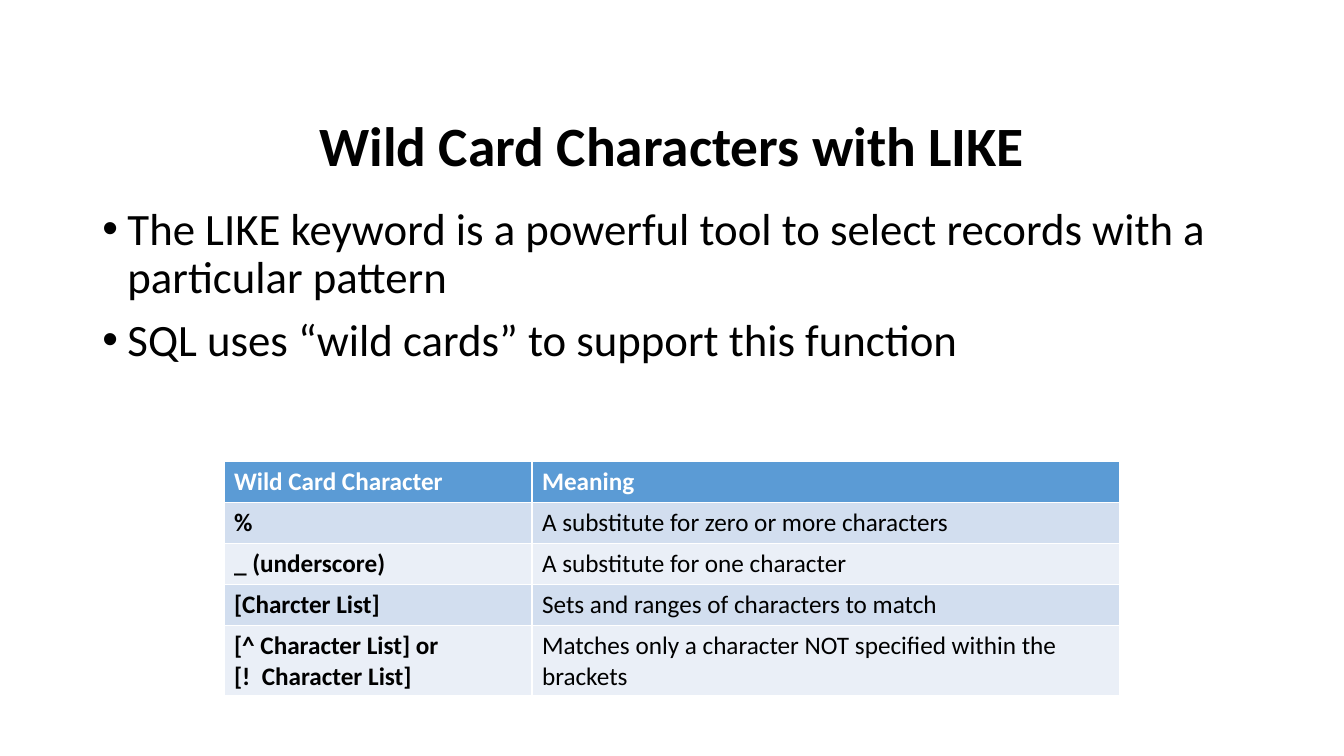
from pptx import Presentation
from pptx.dml.color import RGBColor
from pptx.enum.text import MSO_ANCHOR, PP_ALIGN
from pptx.oxml.xmlchemy import OxmlElement
from pptx.util import Pt


def rgb(value):
    return RGBColor.from_string(value)


def add_text(paragraph, text, size, color="000000", bold=False):
    run = paragraph.add_run()
    run.text = text
    run.font.name = "Calibri"
    run.font.size = Pt(size)
    run.font.bold = bold
    run.font.color.rgb = rgb(color)


presentation = Presentation()
presentation.slide_width = Pt(960)
presentation.slide_height = Pt(540)
slide = presentation.slides.add_slide(presentation.slide_layouts[6])

# Title
title = slide.shapes.add_textbox(Pt(66), Pt(79.2), Pt(828), Pt(54)).text_frame
title.word_wrap = True
title.vertical_anchor = MSO_ANCHOR.MIDDLE
paragraph = title.paragraphs[0]
paragraph.alignment = PP_ALIGN.CENTER
paragraph.line_spacing = 0.9
add_text(paragraph, "Wild Card Characters with LIKE", 39.6, bold=True)

# Bullets
bullets = [
    "The LIKE keyword is a powerful tool to select records with a particular pattern",
    "SQL uses “wild cards” to support this function",
]
body = slide.shapes.add_textbox(Pt(66), Pt(144), Pt(828), Pt(342.7)).text_frame
body.word_wrap = True
for index, text in enumerate(bullets):
    paragraph = body.add_paragraph() if index else body.paragraphs[0]
    paragraph.line_spacing = 0.9
    paragraph.space_before = Pt(10 if index else 0)
    properties = paragraph._p.get_or_add_pPr()
    properties.set("marL", str(Pt(18)))
    properties.set("indent", str(-Pt(18)))
    font = OxmlElement("a:buFont")
    font.set("typeface", "Arial")
    bullet = OxmlElement("a:buChar")
    bullet.set("char", "•")
    properties.extend([font, bullet])
    add_text(paragraph, text, 32)

# Table of wild cards: the default table style supplies the white borders
wild_cards = [
    ("Wild Card Character", "Meaning"),
    ("%", "A substitute for zero or more characters"),
    ("_ (underscore)", "A substitute for one character"),
    ("[Charcter List]", "Sets and ranges of characters to match"),
    ("[^ Character List] or\n[!  Character List]",
     "Matches only a character NOT specified within the brackets"),
]
row_heights = [29.2] * 4 + [50.4]
table = slide.shapes.add_table(
    len(wild_cards), 2, Pt(160), Pt(329.8), Pt(640), Pt(sum(row_heights))
).table
for column, width in zip(table.columns, (220, 420)):
    column.width = Pt(width)

for row_index, (row, height) in enumerate(zip(wild_cards, row_heights)):
    table.rows[row_index].height = Pt(height)
    is_header = row_index == 0
    band = "D2DEEF" if row_index % 2 else "EAEFF7"
    for column_index, text in enumerate(row):
        cell = table.cell(row_index, column_index)
        cell.fill.solid()
        cell.fill.fore_color.rgb = rgb("5B9BD5" if is_header else band)
        frame = cell.text_frame
        for line_index, line in enumerate(text.split("\n")):
            paragraph = frame.add_paragraph() if line_index else frame.paragraphs[0]
            add_text(paragraph, line, 18, "FFFFFF" if is_header else "000000",
                     bold=is_header or column_index == 0)

presentation.save("out.pptx")
